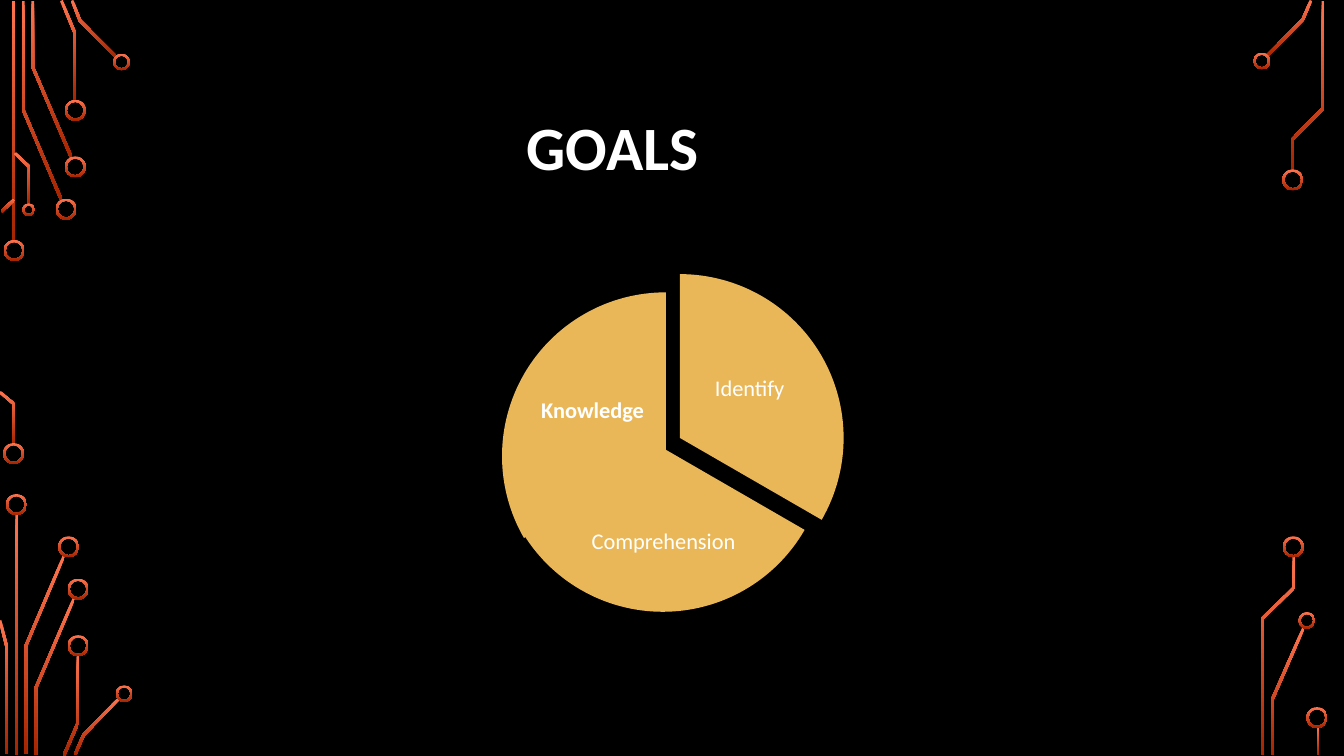
from pptx import Presentation
from pptx.util import Pt
from pptx.dml.color import RGBColor as Rgb
from pptx.enum.shapes import MSO_SHAPE as Form
from pptx.enum.text import MSO_ANCHOR as Anchor, PP_ALIGN as Align

# Content: all lengths in points
TITLE = {"text": "GOALS", "box": (90, 49, 780, 116.6), "indent": 279}

# Pie parts: label, bold, pie corner, start and end angle, label box
PARTS = [
    ("Identify", False, (368.6, 195.8), (270, 30), (496, 239, 79, 78)),
    ("Comprehension", False, (356.4, 203), (30, 150), (421, 350.6, 106, 73)),
    ("Knowledge", True, (358.6, 208.8), (150, 270), (383.8, 254.9, 79, 78)),
]
PIE = 234

# Circuit traces: centre lines
TRACES = [
    # top left
    [(9.7, 0.7), (9.7, 172.8)],
    [(16.6, 0.7), (16.6, 78.5), (43.9, 142.9)],
    [(23.4, 0.7), (23.4, 47.9), (51.1, 112.7)],
    [(43.9, 0.4), (53.6, 23.8), (53.6, 72)],
    [(51.5, 0.4), (57.2, 14.8), (83.2, 41)],
    [(1.1, 151.2), (10.1, 142.6)],
    [(10.8, 109.4), (20.9, 119.2), (20.9, 146.2)],
    # bottom left
    [(0, 280.1), (10.1, 288.7), (10.1, 317.5)],
    [(11.9, 367.2), (11.9, 539.3)],
    [(18.4, 538.6), (18.4, 461.5), (45.7, 397.1)],
    [(4.7, 538.6), (4.7, 461.5), (0, 443.2)],
    [(25.6, 539.3), (25.6, 491.4), (52.9, 427.3)],
    [(45.7, 539.6), (55.8, 516.2), (55.8, 468)],
    [(53.6, 538.9), (59.8, 524.9), (85, 499)],
    # top right
    [(905, 40), (930.6, 14), (936.4, 0.4)],
    [(923, 121.7), (923, 99.7), (945, 77.4), (945, 0.7)],
    # bottom right
    [(909, 539.3), (909, 499.3), (931, 448.9)],
    [(901.8, 539.3), (901.8, 441.7), (924.1, 420.1), (924.1, 397.4)],
    [(941.4, 519.1), (941.4, 539.3)],
]

# Circuit rings: centres by diameter
RINGS = {
    15: [(10.1, 178.9), (9.7, 324), (47.2, 149.4), (53.8, 119.2),
         (53.8, 78.8), (11.7, 360.4), (49, 390.6), (55.8, 420.8),
         (55.8, 461.2), (923.4, 128.5), (923.8, 390.6), (940.7, 512.6)],
    12: [(86.8, 44.3), (88.7, 495.5), (901.3, 43.6), (933.5, 443.2)],
    9: [(20.5, 149.8)],
}

THEME = {
    "back": Rgb(0, 0, 0),
    "pie": Rgb(0xE9, 0xB7, 0x58),
    "glow": (Rgb(0xFF, 0x74, 0x4E), Rgb(0xA6, 0x24, 0x00)),
    "trace": 2,
    "rim": 1.5,
    "title": {"name": "Calibri", "size": Pt(44), "bold": True},
    "label": {"name": "Calibri", "size": Pt(16)},
    "ink": Rgb(255, 255, 255),
}

deck = Presentation()
deck.slide_width, deck.slide_height = Pt(960), Pt(540)
slide = deck.slides.add_slide(deck.slide_layouts[6])
slide.background.fill.solid()
slide.background.fill.fore_color.rgb = THEME["back"]
shapes = slide.shapes


def glow(shape):
    """Give a circuit part its top-to-bottom gradient."""
    shape.shadow.inherit = False
    shape.line.fill.background()
    shape.fill.gradient()
    shape.fill.gradient_angle = 270
    for stop, color in zip(shape.fill.gradient_stops, THEME["glow"]):
        stop.color.rgb = color


def outline(line, width):
    """Widen a centre line into a band with mitred corners."""
    dots = [complex(*dot) for dot in line]
    norms = [(b - a) / abs(b - a) * 1j for a, b in zip(dots, dots[1:])]
    left, right = [], []
    for dot, m, n in zip(dots, norms[:1] + norms, norms + norms[-1:]):
        shift = (m + n) / (1 + (m * n.conjugate()).real) * width / 2
        left.append(dot + shift)
        right.append(dot - shift)
    return [(Pt(dot.real), Pt(dot.imag)) for dot in left + right[::-1]]


def write(text, box, style, align, inset):
    """Add one line of text in the middle of a box."""
    frame = shapes.add_textbox(*map(Pt, box)).text_frame
    sides = dict.fromkeys(("margin_left", "margin_right",
                           "margin_top", "margin_bottom"), Pt(inset))
    for key, value in {"word_wrap": True, **sides,
                       "vertical_anchor": Anchor.MIDDLE}.items():
        setattr(frame, key, value)
    para = frame.paragraphs[0]
    para.alignment, para.line_spacing = align, 0.9
    run = para.add_run()
    run.text = text
    for key, value in style.items():
        setattr(run.font, key, value)
    run.font.color.rgb = THEME["ink"]
    return para


# Circuit
for line in TRACES:
    band = outline(line, THEME["trace"])
    form = shapes.build_freeform(*band[0], scale=1.0)
    form.add_line_segments(band[1:], close=True)
    glow(form.convert_to_shape())

for size, spots in RINGS.items():
    for x, y in spots:
        ring = shapes.add_shape(Form.DONUT, Pt(x - size / 2),
                                Pt(y - size / 2), Pt(size), Pt(size))
        ring.adjustments[0] = THEME["rim"] / size
        glow(ring)

# Title
para = write(TITLE["text"], TITLE["box"], THEME["title"], Align.LEFT, 7.2)
para._p.get_or_add_pPr().set("marL", str(Pt(TITLE["indent"])))

# Pie
for text, bold, spot, turn, box in PARTS:
    part = shapes.add_shape(Form.PIE, *map(Pt, (*spot, PIE, PIE)))
    for i, angle in enumerate(turn):
        part.adjustments[i] = angle * 0.6  # 60000 units to a degree
    part.shadow.inherit = False
    part.fill.solid()
    part.fill.fore_color.rgb = THEME["pie"]
    part.line.fill.background()
    write(text, box, {**THEME["label"], "bold": bold}, Align.CENTER, 1.4)

deck.save("out.pptx")
